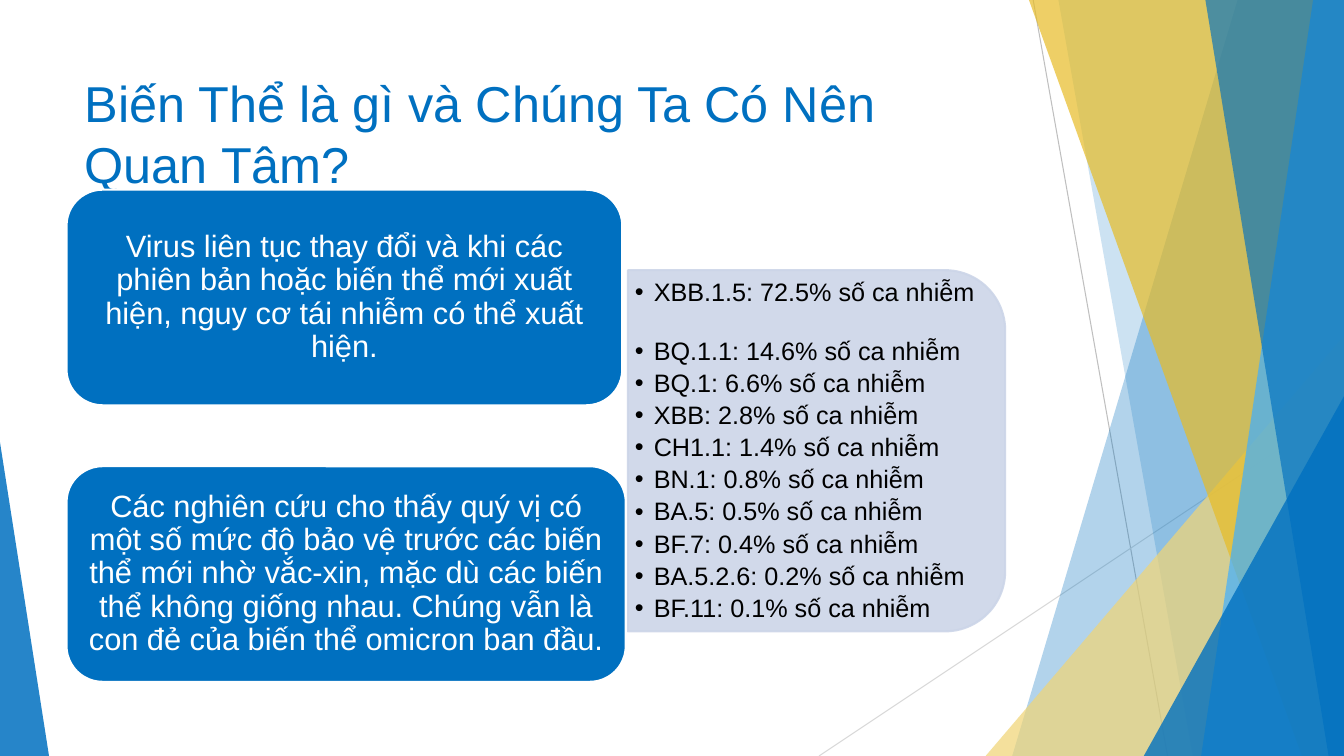
from dataclasses import dataclass

from lxml import etree
from pptx import Presentation
from pptx.dml.color import RGBColor
from pptx.enum.shapes import MSO_CONNECTOR, MSO_SHAPE
from pptx.enum.text import MSO_ANCHOR, MSO_AUTO_SIZE, PP_ALIGN
from pptx.oxml.ns import qn
from pptx.util import Pt

TRIANGLE = MSO_SHAPE.ISOSCELES_TRIANGLE
ROUND_BOX = MSO_SHAPE.ROUNDED_RECTANGLE
ROUND_TOP = MSO_SHAPE.ROUND_2_SAME_RECTANGLE
STRAIGHT = MSO_CONNECTOR.STRAIGHT
TOP, MIDDLE = MSO_ANCHOR.TOP, MSO_ANCHOR.MIDDLE
LEFT, CENTER = PP_ALIGN.LEFT, PP_ALIGN.CENTER
NO_FIT = MSO_AUTO_SIZE.NONE

WIDTH, HEIGHT = 960, 540


@dataclass(frozen=True)
class Theme:
    font: str = "Arial"
    blue: str = "0070C0"
    sky: str = "40AFFF"
    gold: str = "E7BC26"
    sand: str = "F0D577"
    panel: str = "CCD5E8"
    white: str = "FFFFFF"
    black: str = "000000"
    rule_dark: str = "BFBFBF"
    rule_light: str = "D9D9D9"
    title_size: int = 36
    box_size: int = 22
    list_size: int = 18


THEME = Theme()

VARIANTS = [
    ("XBB.1.5", 72.5), ("BQ.1.1", 14.6), ("BQ.1", 6.6), ("XBB", 2.8),
    ("CH1.1", 1.4), ("BN.1", 0.8), ("BA.5", 0.5), ("BF.7", 0.4),
    ("BA.5.2.6", 0.2), ("BF.11", 0.1),
]


def write(p, text, size, color, align=LEFT, spacing=1.0, after=0):
    p.alignment = align
    p.line_spacing = spacing
    p.space_before, p.space_after = Pt(0), Pt(after)
    r = p.add_run()
    r.text = text
    r.font.name = THEME.font
    r.font.size = Pt(size)
    r.font.color.rgb = RGBColor.from_string(color)


def add_bullet(p, indent):
    pPr = p._p.get_or_add_pPr()
    pPr.set("marL", str(Pt(indent)))
    pPr.set("indent", str(-Pt(indent)))
    etree.SubElement(pPr, qn("a:buFont")).set("typeface", THEME.font)
    etree.SubElement(pPr, qn("a:buChar")).set("char", "•")


class SlideBuilder:
    def __init__(self, s, theme):
        self.s = s
        self.theme = theme

    def paint(self, sp, color, opacity=100, line=None):
        sp.shadow.inherit = False
        sp.fill.solid()
        sp.fill.fore_color.rgb = RGBColor.from_string(color)
        if line:
            sp.line.color.rgb = RGBColor.from_string(line)
            sp.line.width = Pt(1.5)
        else:
            sp.line.fill.background()
        if opacity < 100:
            for clr in sp._element.spPr.iter(qn("a:srgbClr")):
                etree.SubElement(clr, qn("a:alpha")).set("val", str(opacity * 1000))

    def frame(self, sp, anchor, inset_x, inset_y):
        tf = sp.text_frame
        tf.word_wrap = True
        tf.auto_size = NO_FIT
        tf.vertical_anchor = anchor
        tf.margin_left = tf.margin_right = Pt(inset_x)
        tf.margin_top = tf.margin_bottom = Pt(inset_y)
        return tf

    def shape(self, kind, x, y, w, h, color, **look):
        sp = self.s.shapes.add_shape(kind, Pt(x), Pt(y), Pt(w), Pt(h))
        self.paint(sp, color, **look)
        return sp

    def triangle(self, x, y, apex, w, color, opacity):
        sp = self.shape(TRIANGLE, x, y, w, HEIGHT - y, color, opacity=opacity)
        sp.adjustments[0] = apex

    def shard(self, top_x, bottom_x, color, opacity):
        builder = self.s.shapes.build_freeform(top_x, 0, scale=Pt(1))
        builder.add_line_segments([(WIDTH, 0), (WIDTH, HEIGHT), (bottom_x, HEIGHT)])
        self.paint(builder.convert_to_shape(), color, opacity)

    def rule(self, x1, y1, x2, y2, color):
        c = self.s.shapes.add_connector(STRAIGHT, Pt(x1), Pt(y1), Pt(x2), Pt(y2))
        c.line.color.rgb = RGBColor.from_string(color)
        c.line.width = Pt(0.75)
        etree.SubElement(c._element.spPr, qn("a:effectLst"))

    def place(self, sp, x, y, w, h):
        sp.left, sp.top, sp.width, sp.height = Pt(x), Pt(y), Pt(w), Pt(h)
        tree = sp._element.getparent()
        tree.append(sp._element)

    def title(self, text, x, y, w, h):
        sp = self.s.shapes.title
        self.place(sp, x, y, w, h)
        tf = self.frame(sp, TOP, 7.2, 3.6)
        write(tf.paragraphs[0], text, self.theme.title_size, self.theme.blue)

    def message(self, text, x, y, w, h):
        sp = self.shape(ROUND_BOX, x, y, w, h, self.theme.blue, line=self.theme.white)
        tf = self.frame(sp, MIDDLE, 6.5, 3.6)
        write(tf.paragraphs[0], text, self.theme.box_size, self.theme.white,
              align=CENTER, spacing=0.9)

    def panel(self, x, y, w, h):
        sp = self.shape(ROUND_TOP, x + (w - h) / 2, y + (h - w) / 2, h, w,
                        self.theme.panel, opacity=90, line=self.theme.panel)
        sp.rotation = 90

    def bullets(self, items, x, y, w, h):
        sp = self.s.placeholders[1]
        self.place(sp, x, y, w, h)
        tf = self.frame(sp, MIDDLE, 5, 3)
        for i, item in enumerate(items):
            p = tf.paragraphs[0] if i == 0 else tf.add_paragraph()
            write(p, item, self.theme.list_size, self.theme.black,
                  spacing=0.9, after=3.5 if i else 22.8)
            add_bullet(p, 13.5)


def draw_backdrop(b):
    t = b.theme
    b.rule(738, 0, 834, HEIGHT, t.rule_dark)
    b.rule(WIDTH, 290, 585, HEIGHT, t.rule_light)
    b.shard(884, 723, t.blue, 30)
    b.shard(756, 852, t.blue, 20)
    b.triangle(704, 240, 1, 256, t.sand, 72)
    b.shard(735, 930, t.gold, 70)
    b.shard(938, 858, t.sky, 70)
    b.shard(861, 949, t.blue, 65)
    b.triangle(817, 283, 1, 143, t.blue, 80)
    b.triangle(0, 316, 0, 35, t.blue, 85)


def main():
    prs = Presentation()
    prs.slide_width, prs.slide_height = Pt(WIDTH), Pt(HEIGHT)
    b = SlideBuilder(prs.slides.add_slide(prs.slide_layouts[1]), THEME)
    draw_backdrop(b)
    b.title("Biến Thể là gì và Chúng Ta Có Nên Quan Tâm?", 53.3, 48.2, 670, 103.7)
    b.panel(448.5, 193, 269.5, 258)
    b.bullets([f"{name}: {share}% số ca nhiễm" for name, share in VARIANTS],
              448.5, 206, 257, 232.5)
    b.message("Virus liên tục thay đổi và khi các phiên bản hoặc biến thể mới "
              "xuất hiện, nguy cơ tái nhiễm có thể xuất hiện.",
              47.5, 135.5, 397, 154)
    b.message("Các nghiên cứu cho thấy quý vị có một số mức độ bảo vệ trước các "
              "biến thể mới nhờ vắc-xin, mặc dù các biến thể không giống nhau. "
              "Chúng vẫn là con đẻ của biến thể omicron ban đầu.",
              47.5, 333, 399.5, 154)
    prs.save("out.pptx")


if __name__ == "__main__":
    main()
